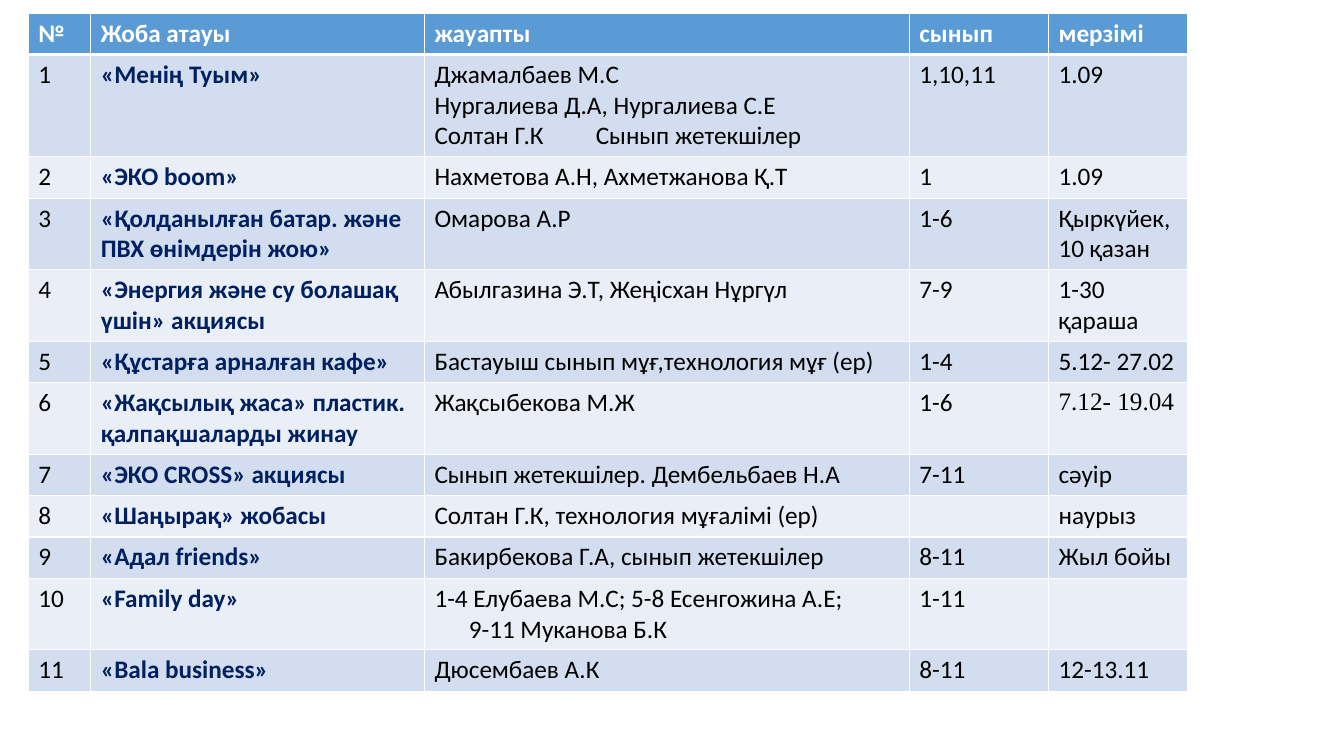
from pptx import Presentation
from pptx.dml.color import RGBColor as RGB
from pptx.oxml.xmlchemy import OxmlElement as Elem
from pptx.util import Inches, Pt

COLORS = {"head": "5B9BD5", "odd": "D2DEEF", "even": "EAEFF7",
          "white": "FFFFFF", "black": "000000", "navy": "002060"}
WIDTHS = [0.62, 3.31, 4.81, 1.38, 1.38]
ROW = 0.41
TAB, INDENT = 1.6, 0.34
SERIF = "Times New Roman"

HEADS = ["№", "Жоба атауы", "жауапты", "сынып", "мерзімі"]
# Project, people in charge (one line each), grades, dates
PLANS = [
    ("«Менің Туым»", ["Джамалбаев М.С", "Нургалиева Д.А, Нургалиева С.Е",
                      "Солтан Г.К\tСынып жетекшілер"], "1,10,11", "1.09"),
    ("«ЭКО boom»", ["Нахметова А.Н, Ахметжанова Қ.Т"], "1", "1.09"),
    ("«Қолданылған батар. және ПВХ өнімдерін жою»", ["Омарова А.Р"],
     "1-6", "Қыркүйек, 10 қазан"),
    ("«Энергия және су болашақ үшін» акциясы",
     ["Абылгазина Э.Т, Жеңісхан Нұргүл"], "7-9", "1-30 қараша"),
    ("«Құстарға арналған кафе»",
     ["Бастауыш сынып мұғ,технология мұғ (ер)"], "1-4", "5.12- 27.02"),
    ("«Жақсылық жаса» пластик. қалпақшаларды жинау",
     ["Жақсыбекова М.Ж"], "1-6", "7.12- 19.04"),
    ("«ЭКО CROSS» акциясы", ["Сынып жетекшілер. Дембельбаев Н.А"],
     "7-11", "сәуір"),
    ("«Шаңырақ» жобасы", ["Солтан Г.К, технология мұғалімі (ер)"],
     "", "наурыз"),
    ("«Адал friends»", ["Бакирбекова Г.А, сынып жетекшілер"],
     "8-11", "Жыл бойы"),
    ("«Family day»", ["1-4 Елубаева М.С; 5-8 Есенгожина А.Е;",
                      "9-11 Муканова Б.К"], "1-11", ""),
    ("«Bala business»", ["Дюсембаев А.К"], "8-11", "12-13.11"),
]
SERIF_DATE = "7.12- 19.04"
INDENTED = "9-11 Муканова Б.К"


class Deck:
    def __init__(self, font, size):
        self.font, self.size = font, size
        self.prs = Presentation()
        self.prs.slide_width = Inches(13.33)
        self.prs.slide_height = Inches(7.5)
        self.slide = self.prs.slides.add_slide(self.prs.slide_layouts[6])

    def table(self, left, top, widths, count):
        frame = self.slide.shapes.add_table(
            count, len(widths), Inches(left), Inches(top),
            Inches(sum(widths)), Inches(ROW * count))
        grid = frame.table
        for col, width in zip(grid.columns, widths):
            col.width = Inches(width)
        for row in grid.rows:
            row.height = Inches(ROW)
        return grid

    def cell(self, cell, lines, fill, color, bold=False, above=1, below=1):
        """Fill one cell; above and below are border widths in points."""
        self.edges(cell, {"L": 1, "R": 1, "T": above, "B": below})
        cell.fill.solid()
        cell.fill.fore_color.rgb = RGB.from_string(COLORS[fill])
        frame = cell.text_frame
        for i, line in enumerate(lines):
            par = frame.add_paragraph() if i else frame.paragraphs[0]
            par.font.size = Pt(self.size)
            if line:
                self.run(par, line, color, bold)

    def run(self, par, text, color, bold):
        run = par.add_run()
        run.text = text
        font = run.font
        font.name = SERIF if text == SERIF_DATE else self.font
        font.size, font.bold = Pt(self.size), bold
        font.color.rgb = RGB.from_string(COLORS[color])
        props = par._p.get_or_add_pPr()
        if text == INDENTED:
            props.set("marL", str(Inches(INDENT)))
        if "\t" in text:
            stops, stop = Elem("a:tabLst"), Elem("a:tab")
            stop.set("pos", str(Inches(TAB)))
            stop.set("algn", "l")
            stops.append(stop)
            props.insert(0, stops)

    def edges(self, cell, sides):
        props = cell._tc.get_or_add_tcPr()
        for side, width in sides.items():
            line, fill, tone = (Elem("a:ln" + side), Elem("a:solidFill"),
                                Elem("a:srgbClr"))
            line.set("w", str(Pt(width)))
            tone.set("val", COLORS["white"])
            fill.append(tone)
            line.append(fill)
            props.append(line)


def main():
    deck = Deck("Calibri", 18)
    grid = deck.table(0.28, 0.13, WIDTHS, len(PLANS) + 1)
    for col, head in enumerate(HEADS):
        deck.cell(grid.cell(0, col), [head], "head", "white", True, below=3)
    for num, (title, people, grades, dates) in enumerate(PLANS, 1):
        fill = "odd" if num % 2 else "even"
        cols = [[str(num)], [title], people, [grades], [dates]]
        for col, lines in enumerate(cols):
            name = col == 1
            deck.cell(grid.cell(num, col), lines, fill,
                      "navy" if name else "black", name,
                      above=3 if num == 1 else 1)
    deck.prs.save("out.pptx")


if __name__ == "__main__":
    main()
